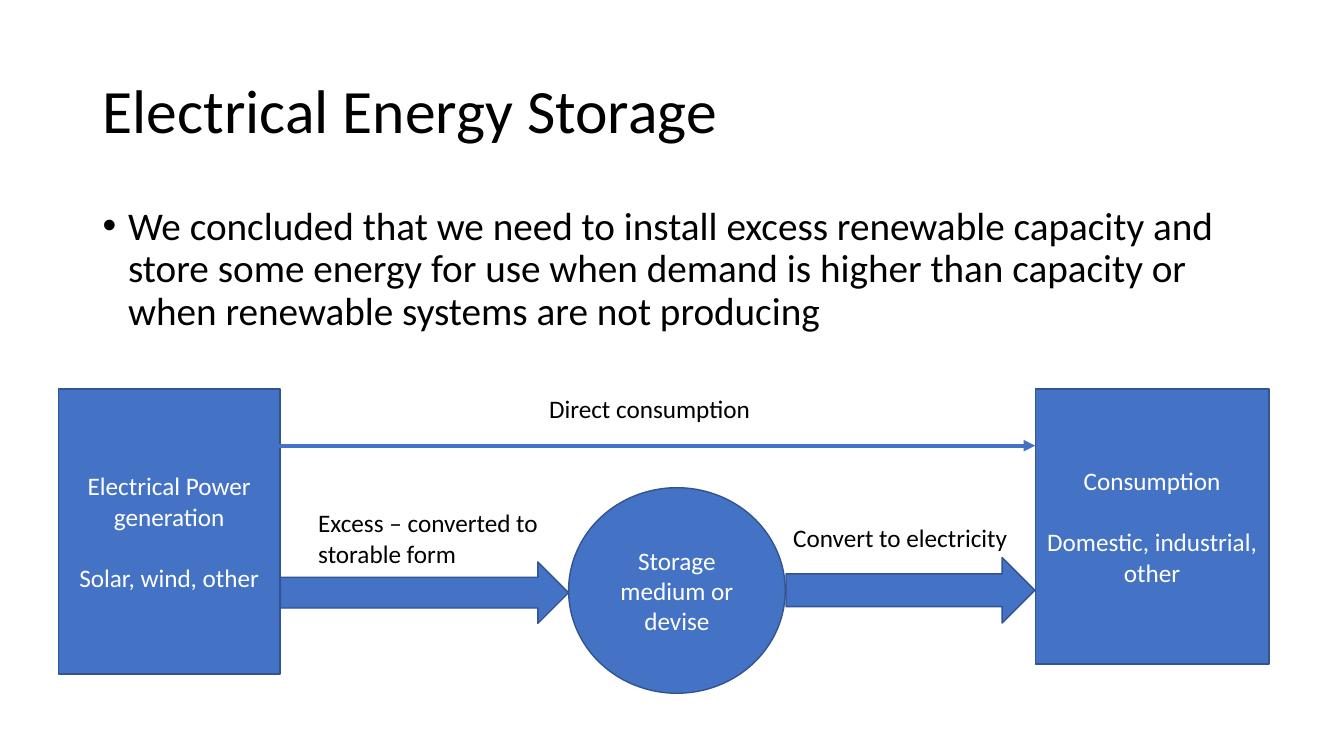
import pptx
import pptx.util
import pptx.dml.color
import pptx.enum.shapes
import pptx.enum.text
import lxml.etree

Cm = pptx.util.Cm
Pt = pptx.util.Pt
RGBColor = pptx.dml.color.RGBColor
Kind = pptx.enum.shapes.MSO_SHAPE
Align = pptx.enum.text.PP_ALIGN
Anchor = pptx.enum.text.MSO_ANCHOR

BLACK = RGBColor(0x00, 0x00, 0x00)
WHITE = RGBColor(0xFF, 0xFF, 0xFF)
BLUE = RGBColor(0x44, 0x72, 0xC4)
EDGE = RGBColor(0x32, 0x54, 0x91)


def apply(item, values):
    for name, value in values.items():
        setattr(item, name, value)


class Deck:
    """Holds the style and the current slide, and draws each kind of element."""

    def __init__(self):
        self.show = pptx.Presentation()
        apply(self.show, {"slide_width": Cm(33.87), "slide_height": Cm(19.05)})
        self.slide = self.show.slides.add_slide(self.show.slide_layouts[6])
        self.font = {"name": "Calibri", "size": Pt(18)}

    def fill_text(self, frame, lines, color, size=18, anchor=Anchor.TOP, **form):
        apply(frame, {"word_wrap": True, "vertical_anchor": anchor})
        for index, line in enumerate(lines):
            para = frame.add_paragraph() if index else frame.paragraphs[0]
            apply(para, form)
            if index:
                para.space_before = Pt(22)
            run = para.add_run()
            run.text = line
            apply(run.font, {**self.font, "size": Pt(size)})
            run.font.color.rgb = color

    def text(self, box, line, **form):
        frame = self.slide.shapes.add_textbox(*map(Cm, box)).text_frame
        self.fill_text(frame, [line], BLACK, **form)
        return frame

    def bullet(self, box, line, **form):
        props = self.text(box, line, **form).paragraphs[0]._p.get_or_add_pPr()
        apart = Cm(0.64)
        props.set("marL", str(apart))
        props.set("indent", str(-apart))
        tag = pptx.oxml.ns.qn
        lxml.etree.SubElement(props, tag("a:buFont")).set("typeface", "Arial")
        lxml.etree.SubElement(props, tag("a:buChar")).set("char", "•")

    def shape(self, kind, box, lines=()):
        shape = self.slide.shapes.add_shape(kind, *map(Cm, box))
        shape.shadow.inherit = False
        shape.fill.solid()
        shape.fill.fore_color.rgb = BLUE
        shape.line.color.rgb = EDGE
        shape.line.width = Pt(1)
        self.fill_text(shape.text_frame, lines, WHITE,
                       anchor=Anchor.MIDDLE, alignment=Align.CENTER)

    def arrow(self, ends):
        link = self.slide.shapes.add_connector(
            pptx.enum.shapes.MSO_CONNECTOR.STRAIGHT, *map(Cm, ends))
        link.line.color.rgb = BLUE
        link.line.width = Pt(2.75)
        tag = pptx.oxml.ns.qn
        line = link.line._get_or_add_ln()
        lxml.etree.SubElement(line, tag("a:tailEnd")).set("type", "triangle")
        lxml.etree.SubElement(link._element.spPr, tag("a:effectLst"))


def main():
    deck = Deck()
    deck.text((2.34, 1.02, 29.21, 3.68), "Electrical Energy Storage",
              size=44, anchor=Anchor.MIDDLE, line_spacing=0.9)
    deck.bullet((2.34, 5.08, 28.83, 4.17),
                "We concluded that we need to install excess renewable capacity "
                "and store some energy for use when demand is higher than "
                "capacity or when renewable systems are not producing",
                size=28, line_spacing=0.9, space_before=Pt(10))

    for kind, box, lines in (
        (Kind.RECTANGLE, (1.47, 9.8, 5.59, 7.19),
         ["Electrical Power generation", "Solar, wind, other"]),
        (Kind.RIGHT_ARROW, (7.07, 14.16, 7.26, 1.55), []),
        (Kind.OVAL, (14.33, 12.29, 5.46, 5.18), ["Storage medium or devise"]),
        (Kind.RIGHT_ARROW, (19.81, 14.05, 6.27, 1.65), []),
        (Kind.RECTANGLE, (26.09, 9.8, 5.89, 6.93),
         ["Consumption", "Domestic, industrial, other"]),
    ):
        deck.shape(kind, box, lines)

    deck.arrow((7.04, 11.23, 26.09, 11.23))
    for left, top, high, line in (
        (13.59, 9.78, 1.02, "Direct consumption"),
        (7.77, 12.67, 1.8, "Excess – converted to storable form"),
        (19.74, 13.03, 1.02, "Convert to electricity"),
    ):
        deck.text((left, top, 6.2, high), line)
    deck.show.save("out.pptx")


if __name__ == "__main__":
    main()
